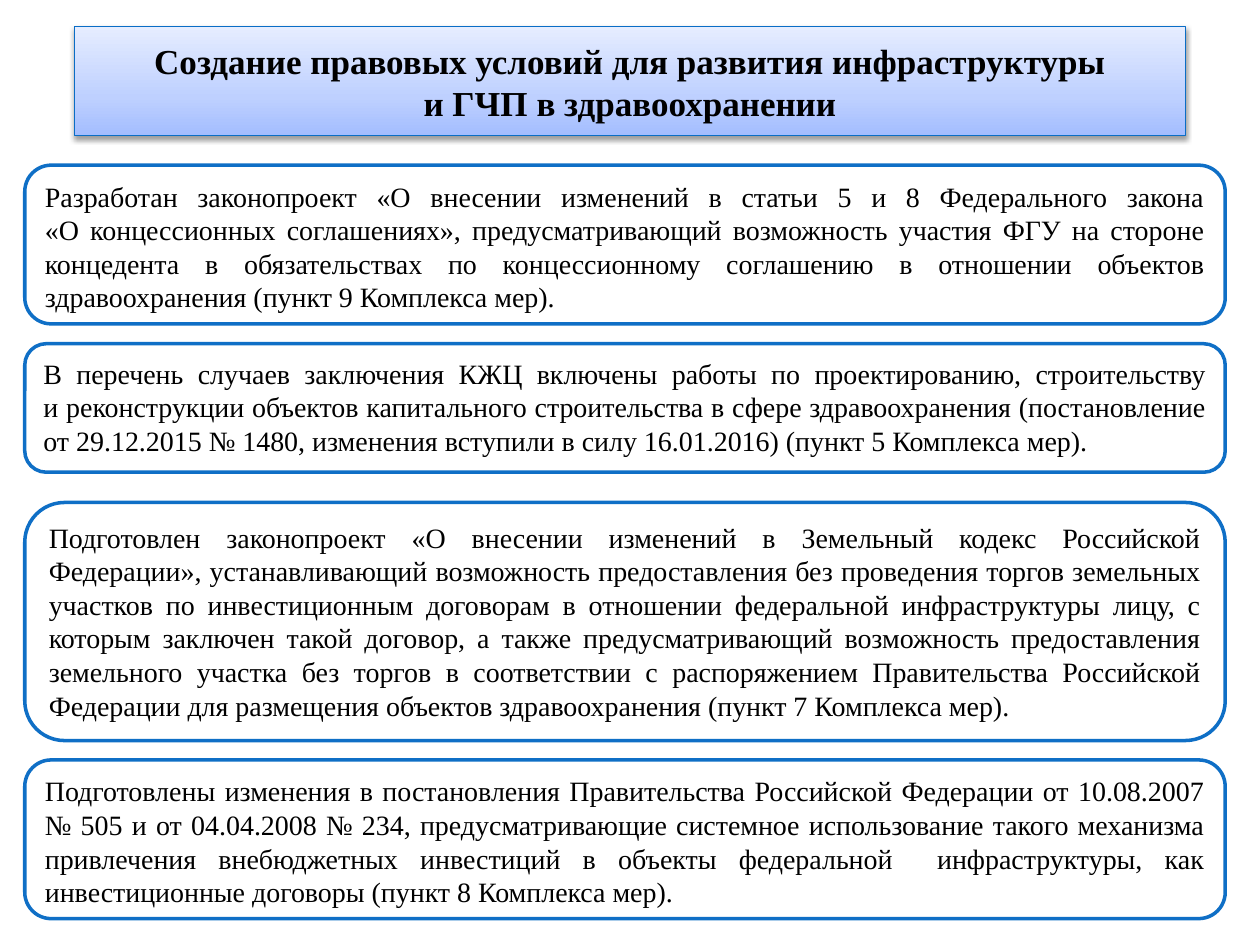
from dataclasses import dataclass
from copy import deepcopy

from lxml.etree import SubElement
from pptx import Presentation
from pptx.dml.color import RGBColor as RGB
from pptx.enum.shapes import MSO_SHAPE as Shape
from pptx.enum.text import MSO_ANCHOR as Anchor, PP_ALIGN as Align
from pptx.oxml.ns import qn
from pptx.util import Cm, Pt

TITLE = [
    "Создание правовых условий для развития инфраструктуры",
    "и ГЧП в здравоохранении",
]

# top and height in centimetres, then the lines of the paragraph
MEASURES = [
    (3.33, 3.2, [
        "Разработан законопроект «О внесении изменений в статьи 5 и 8 Федерального закона",
        "«О концессионных соглашениях», предусматривающий возможность участия ФГУ на стороне "
        "концедента в обязательствах по концессионному соглашению в отношении объектов "
        "здравоохранения (пункт 9 Комплекса мер).",
    ]),
    (6.93, 2.59, [
        "В перечень случаев заключения КЖЦ включены работы по проектированию, строительству",
        "и реконструкции объектов капитального строительства в сфере здравоохранения "
        "(постановление от 29.12.2015 № 1480, изменения вступили в силу 16.01.2016) "
        "(пункт 5 Комплекса мер).",
    ]),
    (10.13, 4.8, [
        "Подготовлен законопроект «О внесении изменений в Земельный кодекс Российской "
        "Федерации», устанавливающий возможность предоставления без проведения торгов земельных "
        "участков по инвестиционным договорам в отношении федеральной инфраструктуры лицу, "
        "с которым заключен такой договор, а также предусматривающий возможность предоставления "
        "земельного участка без торгов в соответствии с распоряжением Правительства Российской "
        "Федерации для размещения объектов здравоохранения (пункт 7 Комплекса мер).",
    ]),
    (15.32, 3.2, [
        "Подготовлены изменения в постановления Правительства Российской Федерации "
        "от 10.08.2007 № 505 и от 04.04.2008 № 234, предусматривающие системное использование "
        "такого механизма привлечения внебюджетных инвестиций в объекты федеральной  "
        "инфраструктуры, как инвестиционные договоры (пункт 8 Комплекса мер).",
    ]),
]


@dataclass(frozen=True)
class Theme:
    font: str = "Times New Roman"
    title_size: int = 20
    body_size: int = 16
    text: str = "000000"
    panel: str = "FFFFFF"
    panel_line: str = "0F6FC6"
    title_line: str = "0A6DC6"
    title_stops: tuple = ((0, "A3BDFF"), (0.35, "BED0FF"), (1, "E6EDFF"))


THEME = Theme()


def add_box(page, kind, left, top, width, height, line_color, line_width):
    box = page.shapes.add_shape(kind, Cm(left), Cm(top), Cm(width), Cm(height))
    box.shadow.inherit = False
    box.line.color.rgb = RGB.from_string(line_color)
    box.line.width = Pt(line_width)
    return box


def write_lines(box, lines, size, align, anchor, bold=False):
    """Write one paragraph, with a line break between the given lines."""
    frame = box.text_frame
    frame.word_wrap = True
    frame.vertical_anchor = anchor
    para = frame.paragraphs[0]
    para.alignment = align
    for number, line in enumerate(lines):
        if number:
            para.add_line_break()
        span = para.add_run()
        span.text = line
        span.font.name = THEME.font
        span.font.size = Pt(size)
        span.font.bold = bold
        span.font.color.rgb = RGB.from_string(THEME.text)


def fill_gradient(box, stops):
    """Fill from bottom to top through three stops."""
    box.fill.gradient()
    box.fill.gradient_angle = 90
    stop_list = box.element.spPr.find(".//" + qn("a:gsLst"))
    stop_list.insert(1, deepcopy(stop_list[0]))
    for stop, (position, color) in zip(box.fill.gradient_stops, stops):
        stop.position = position
        stop.color.rgb = RGB.from_string(color)


def add_drop_shadow(box):
    effects = box.element.spPr.find(qn("a:effectLst"))
    shadow = SubElement(effects, qn("a:outerShdw"), blurRad=str(Pt(3.1)),
                        dist=str(Pt(1.6)), dir="5400000", rotWithShape="0")
    color = SubElement(shadow, qn("a:srgbClr"), val="000000")
    SubElement(color, qn("a:alpha"), val="38000")


def main():
    deck = Presentation()
    deck.slide_width, deck.slide_height = Cm(25.4), Cm(19.05)
    page = deck.slides.add_slide(deck.slide_layouts[6])

    title = add_box(page, Shape.RECTANGLE, 1.5, 0.53, 22.4, 2.21, THEME.title_line, 0.75)
    fill_gradient(title, THEME.title_stops)
    add_drop_shadow(title)
    write_lines(title, TITLE, THEME.title_size, Align.CENTER, Anchor.MIDDLE, bold=True)

    for top, height, lines in MEASURES:
        panel = add_box(page, Shape.ROUNDED_RECTANGLE, 0.5, top, 24.2, height,
                        THEME.panel_line, 2)
        panel.fill.solid()
        panel.fill.fore_color.rgb = RGB.from_string(THEME.panel)
        write_lines(panel, lines, THEME.body_size, Align.JUSTIFY, Anchor.TOP)

    deck.save("out.pptx")


if __name__ == "__main__":
    main()
